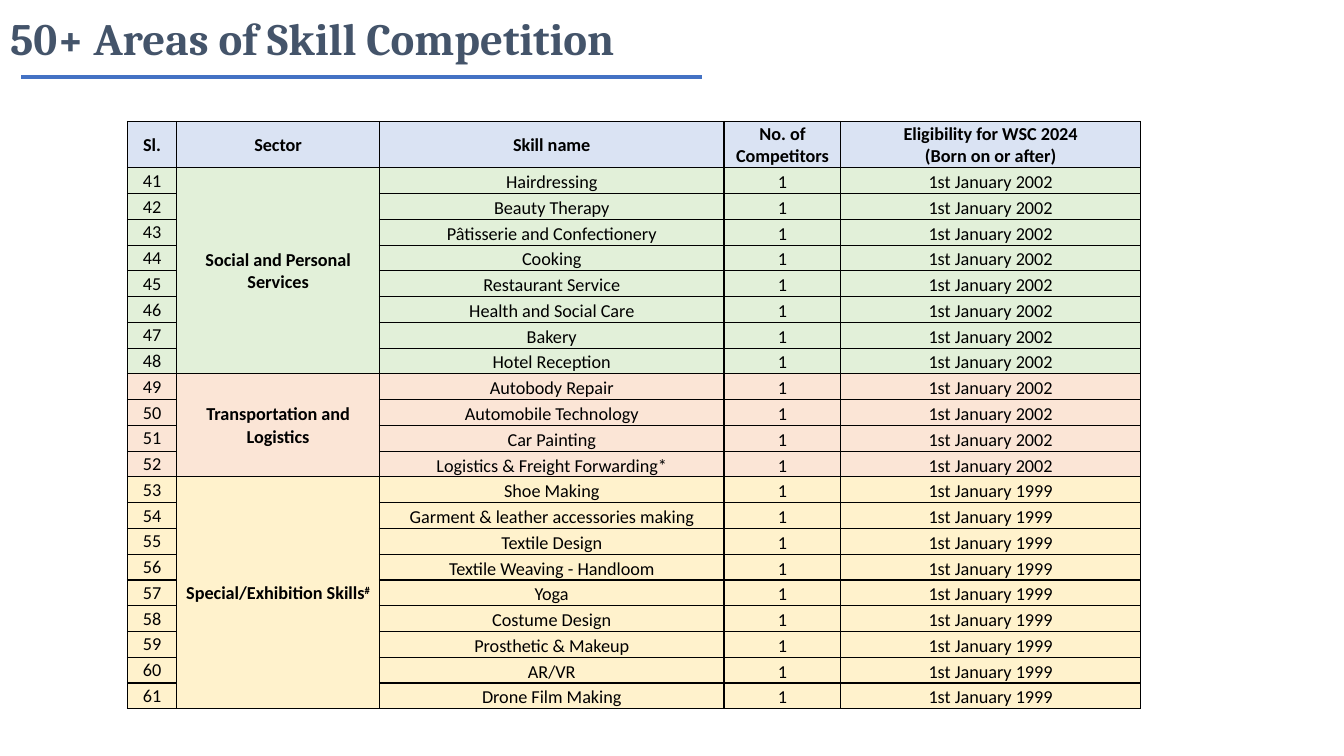
from typing import NamedTuple

from lxml.etree import SubElement
from pptx import Presentation
from pptx.dml.color import RGBColor
from pptx.enum.shapes import MSO_CONNECTOR as Connector
from pptx.enum.text import MSO_ANCHOR as Anchor, MSO_AUTO_SIZE as AutoSize, PP_ALIGN as Align
from pptx.oxml import parse_xml
from pptx.oxml.ns import nsdecls, qn
from pptx.slide import Slide
from pptx.table import Table, _Cell as Cell
from pptx.util import Pt


class Sector(NamedTuple):
    name: str
    fill: str
    born_after: str
    skills: list[str]
    footnote_mark: str = ""


FIRST_SERIAL = 41
COMPETITORS = "1"
HEADER_FILL = "DAE3F3"
HEADINGS = ["Sl.", "Sector", "Skill name", "No. of Competitors",
            "Eligibility for WSC 2024\n(Born on or after)"]
COLUMN_WIDTHS = [35.3, 144.7, 246.2, 83.5, 213.8]
HEADER_HEIGHT = 33.1
SKILL_HEIGHT = 18.41

SECTORS = [
    Sector("Social and Personal Services", "E2F0D9", "1st January 2002", [
        "Hairdressing", "Beauty Therapy", "Pâtisserie and Confectionery", "Cooking",
        "Restaurant Service", "Health and Social Care", "Bakery", "Hotel Reception"]),
    Sector("Transportation and Logistics", "FBE5D6", "1st January 2002", [
        "Autobody Repair", "Automobile Technology", "Car Painting",
        "Logistics & Freight Forwarding*"]),
    Sector("Special/Exhibition Skills", "FFF2CC", "1st January 1999", [
        "Shoe Making", "Garment & leather accessories making", "Textile Design",
        "Textile Weaving - Handloom", "Yoga", "Costume Design", "Prosthetic & Makeup",
        "AR/VR", "Drone Film Making"], "#"),
]


def color(hex_value: str) -> RGBColor:
    return RGBColor.from_string(hex_value)


def add_heading(slide: Slide) -> None:
    title = slide.shapes.title
    title.left, title.top, title.width, title.height = Pt(7.2), Pt(6.5), Pt(739.4), Pt(39.6)
    frame = title.text_frame
    frame.text = "50+ Areas of Skill Competition"
    frame.auto_size = AutoSize.NONE
    frame.vertical_anchor = Anchor.TOP
    frame.margin_left = frame.margin_right = frame.margin_bottom = 0
    frame.margin_top = Pt(1)
    paragraph = frame.paragraphs[0]
    paragraph.alignment = Align.JUSTIFY
    paragraph.line_spacing = 1.0
    font = paragraph.runs[0].font
    font.name, font.size, font.bold = "Cambria", Pt(32), True
    font.color.rgb = color("44546A")

    underline = slide.shapes.add_connector(
        Connector.STRAIGHT, Pt(15.1), Pt(55), Pt(501.8), Pt(55))
    underline.line.color.rgb = color("4472C4")
    underline.line.width = Pt(3)
    SubElement(underline.element.spPr, qn("a:effectLst"))


def format_cell(cell: Cell, fill: str) -> None:
    """Give the cell its fill, margins and thin black borders."""
    cell.fill.solid()
    cell.fill.fore_color.rgb = color(fill)
    cell.margin_left = cell.margin_right = cell.margin_top = Pt(0.7)
    cell.margin_bottom = 0
    properties = cell._tc.get_or_add_tcPr()
    for position, side in enumerate("LRTB"):
        properties.insert(position, parse_xml(
            f'<a:ln{side} {nsdecls("a")} w="{Pt(1)}"><a:solidFill>'
            f'<a:srgbClr val="000000"/></a:solidFill></a:ln{side}>'))


def write_cell(cell: Cell, text: str, bold: bool = False,
               anchor: Anchor = Anchor.MIDDLE, superscript: str = "") -> None:
    cell.text_frame.text = text
    cell.vertical_anchor = anchor
    paragraphs = cell.text_frame.paragraphs
    if superscript:
        mark = paragraphs[-1].add_run()
        mark.text = superscript
        mark._r.get_or_add_rPr().set("baseline", "30000")
    for paragraph in paragraphs:
        paragraph.alignment = Align.CENTER
        for run in paragraph.runs:
            run.font.name, run.font.size, run.font.bold = "Calibri", Pt(13), bold
            run.font.color.rgb = color("000000")


def fill_sector(table: Table, sector: Sector, first_row: int) -> None:
    last_row = first_row + len(sector.skills) - 1
    for row, skill in enumerate(sector.skills, first_row):
        for column in range(len(HEADINGS)):
            format_cell(table.cell(row, column), sector.fill)
        write_cell(table.cell(row, 0), str(FIRST_SERIAL + row - 1))
        for column, text in enumerate([skill, COMPETITORS, sector.born_after], 2):
            write_cell(table.cell(row, column), text, anchor=Anchor.BOTTOM)
    sector_cell = table.cell(first_row, 1)
    sector_cell.merge(table.cell(last_row, 1))
    write_cell(sector_cell, sector.name, bold=True, superscript=sector.footnote_mark)


def add_skill_table(slide: Slide) -> None:
    skill_count = sum(len(sector.skills) for sector in SECTORS)
    table = slide.shapes.add_table(
        skill_count + 1, len(HEADINGS), Pt(91), Pt(86.8), Pt(sum(COLUMN_WIDTHS)),
        Pt(HEADER_HEIGHT + skill_count * SKILL_HEIGHT)).table
    table.first_row = table.horz_banding = False
    for column, width in zip(table.columns, COLUMN_WIDTHS):
        column.width = Pt(width)
    for row in table.rows:
        row.height = Pt(SKILL_HEIGHT)
    table.rows[0].height = Pt(HEADER_HEIGHT)

    for column, heading in enumerate(HEADINGS):
        format_cell(table.cell(0, column), HEADER_FILL)
        write_cell(table.cell(0, column), heading, bold=True)
    first_row = 1
    for sector in SECTORS:
        fill_sector(table, sector, first_row)
        first_row += len(sector.skills)


def main() -> None:
    presentation = Presentation()
    presentation.slide_width, presentation.slide_height = Pt(960), Pt(540)
    title_only = presentation.slide_layouts[5]
    slide = presentation.slides.add_slide(title_only)
    add_heading(slide)
    add_skill_table(slide)
    presentation.save("out.pptx")


if __name__ == "__main__":
    main()
